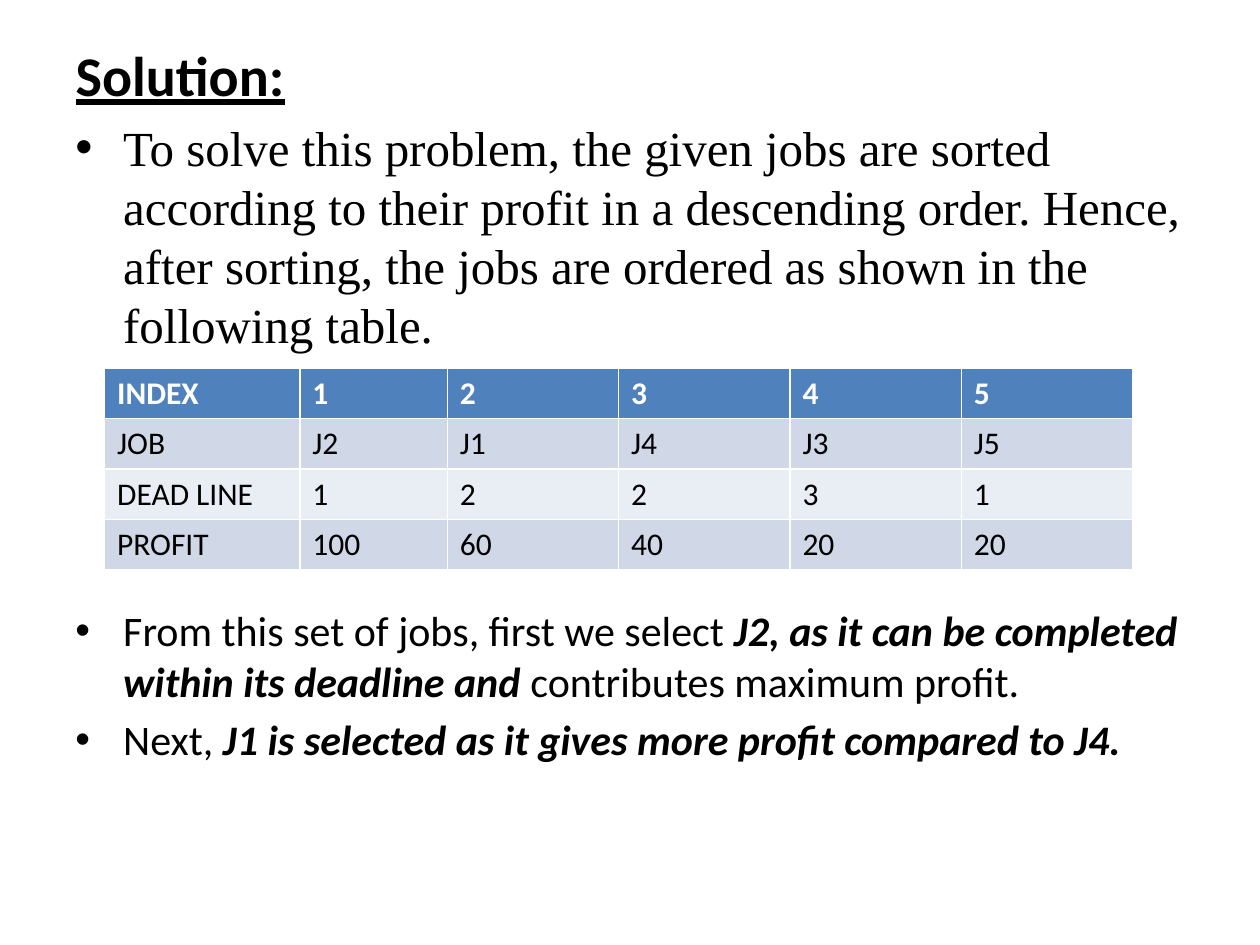
from lxml import etree
from pptx import Presentation
from pptx.dml.color import RGBColor
from pptx.enum.text import MSO_ANCHOR, PP_ALIGN
from pptx.oxml.ns import qn
from pptx.util import Inches, Pt

LEFT = PP_ALIGN.LEFT
TOP = MSO_ANCHOR.TOP
TITLE_ONLY = 5


def color(code):
    return RGBColor.from_string(code)


def style(run, **form):
    ink = form.pop("ink", "000000")
    for name, value in form.items():
        setattr(run.font, name, value)
    run.font.color.rgb = color(ink)


deck = Presentation()
deck.slide_width, deck.slide_height = Inches(10), Inches(7.5)
slide = deck.slides.add_slide(deck.slide_layouts[TITLE_ONLY])

# Title
title = slide.shapes.title
title.left, title.top = Inches(0.5), Inches(0.27)
title.width, title.height = Inches(9), Inches(0.62)
title.text_frame.vertical_anchor = TOP
head = title.text_frame.paragraphs[0]
head.alignment = LEFT
run = head.add_run()
run.text = "Solution:"
style(run, name="Calibri", size=Pt(32), bold=True, underline=True)

# Bullets above and below the table: each item is a list of (text, stressed)
blocks = [
    (0.88, 1.98, "Times New Roman", 28, 33.7, [
        [("To solve this problem, the given jobs are sorted according to their "
          "profit in a descending order. Hence, after sorting, the jobs are "
          "ordered as shown in the following table.", False)],
    ]),
    (4.75, 1.4, "Calibri", 24, 28.8, [
        [("From this set of jobs, first we select ", False),
         ("J2, as it can be completed within its deadline and ", True),
         ("contributes maximum profit.", False)],
        [("Next, ", False),
         ("J1 is selected as it gives more profit compared to J4.", True)],
    ]),
]
for top, height, font, size, pitch, items in blocks:
    box = slide.shapes.add_textbox(Inches(0.5), Inches(top), Inches(9), Inches(height))
    frame = box.text_frame
    frame.word_wrap = True
    for i, item in enumerate(items):
        para = frame.add_paragraph() if i else frame.paragraphs[0]
        para.line_spacing = Pt(pitch)
        para.space_before = Pt(0.2 * size if i else 0)
        props = para._p.get_or_add_pPr()
        props.set("marL", str(Inches(0.38)))
        props.set("indent", str(Inches(-0.38)))
        etree.SubElement(props, qn("a:buFont")).set("typeface", "Arial")
        etree.SubElement(props, qn("a:buChar")).set("char", "•")
        for text, stress in item:
            run = para.add_run()
            run.text = text
            style(run, name=font, size=Pt(size), bold=stress, italic=stress)

# Table of sorted jobs; the default style draws the white borders
rows = [
    ("INDEX", "1", "2", "3", "4", "5"),
    ("JOB", "J2", "J1", "J4", "J3", "J5"),
    ("DEAD LINE", "1", "2", "2", "3", "1"),
    ("PROFIT", "100", "60", "40", "20", "20"),
]
fills = ["4F81BD", "D0D8E8", "E9EDF4", "D0D8E8"]
widths = [1.55, 1.17] + [1.36] * 4
table = slide.shapes.add_table(len(rows), len(widths), Inches(0.83), Inches(2.92),
                               Inches(sum(widths)), Inches(1.6)).table
for col, width in zip(table.columns, widths):
    col.width = Inches(width)
for r, (row, fill) in enumerate(zip(rows, fills)):
    for c, text in enumerate(row):
        cell = table.cell(r, c)
        cell.fill.solid()
        cell.fill.fore_color.rgb = color(fill)
        run = cell.text_frame.paragraphs[0].add_run()
        run.text = text
        style(run, name="Calibri", size=Pt(18), bold=r == 0,
              ink="000000" if r else "FFFFFF")

deck.save("out.pptx")
